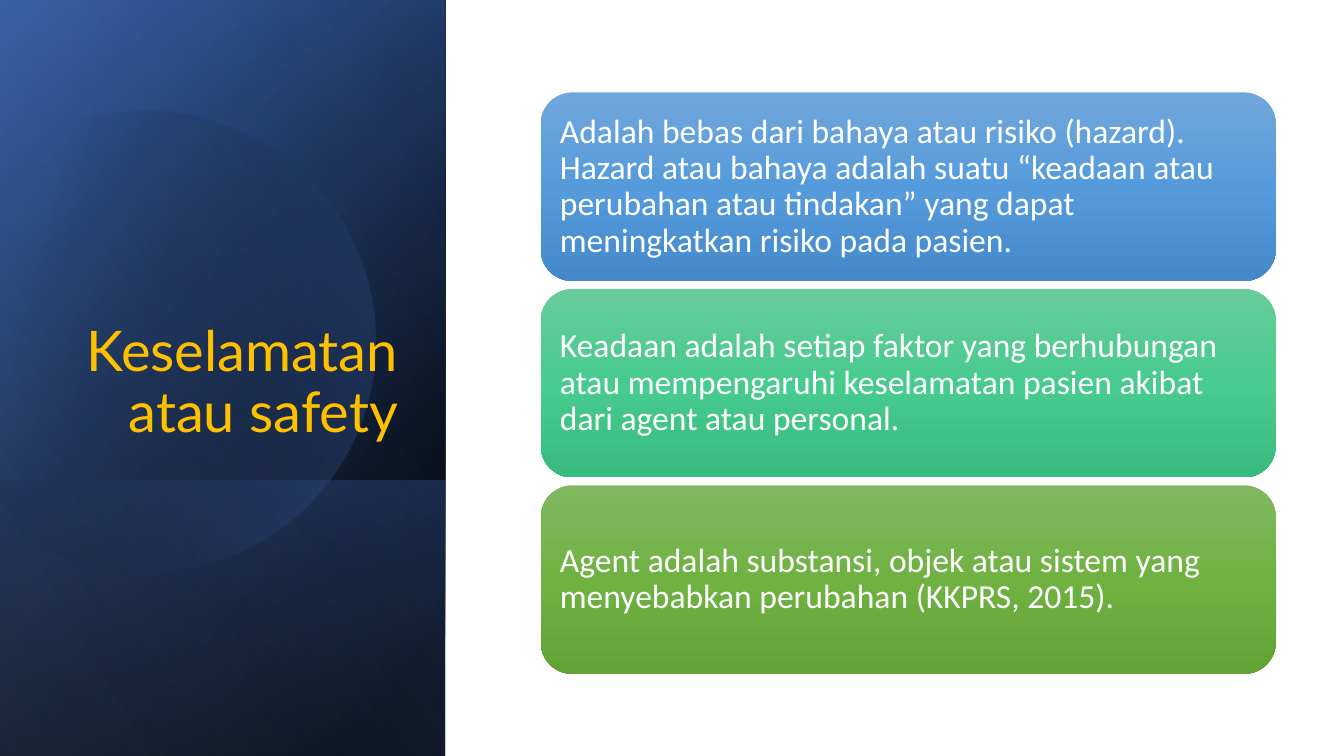
import math

from lxml import etree
from pptx import Presentation
from pptx.dml.color import RGBColor
from pptx.enum.shapes import MSO_SHAPE
from pptx.enum.text import MSO_ANCHOR, MSO_AUTO_SIZE, PP_ALIGN
from pptx.oxml.ns import qn
from pptx.util import Cm, Pt

RECT, ROUNDED = MSO_SHAPE.RECTANGLE, MSO_SHAPE.ROUNDED_RECTANGLE
LEFT, RIGHT = PP_ALIGN.LEFT, PP_ALIGN.RIGHT
MIDDLE, BOTTOM = MSO_ANCHOR.MIDDLE, MSO_ANCHOR.BOTTOM
NO_AUTOFIT = MSO_AUTO_SIZE.NONE

COLORS = {
    "black": "000000", "navy": "2F5597", "blue": "4472C4", "pale": "8FAADC",
    "gold": "FFC000", "white": "FFFFFF",
}
SLIDE_W, SLIDE_H = 33.87, 19.05
PANEL_W = 11.22
STRIP_H = 6.95
DISC_ANGLES = (-118, -90, 0, 90, 150)

# Colours from top to bottom, then the wording of each card
CARDS = [
    (("71A6DB", "559BDB", "448ACA"),
     "Adalah bebas dari bahaya atau risiko (hazard). Hazard atau bahaya adalah "
     "suatu “keadaan atau perubahan atau tindakan” yang dapat meningkatkan "
     "risiko pada pasien."),
    (("67CC9A", "47CB8E", "39BB7F"),
     "Keadaan adalah setiap faktor yang berhubungan atau mempengaruhi "
     "keselamatan pasien akibat dari agent atau personal."),
    (("81B861", "6FB242", "62A336"),
     "Agent adalah substansi, objek atau sistem yang menyebabkan perubahan "
     "(KKPRS, 2015)."),
]


def paint_gradient(shape, stops, angle):
    """Fill with (position %, hex, opacity %) stops, angle clockwise."""
    shape.shadow.inherit = False
    shape.line.fill.background()
    shape.fill.gradient()
    gradient = shape.element.spPr.find(qn("a:gradFill"))
    stop_list = gradient.find(qn("a:gsLst"))
    stop_list.clear()
    for position, color, opacity in stops:
        stop = etree.SubElement(stop_list, qn("a:gs"), pos=str(position * 1000))
        rgb = etree.SubElement(stop, qn("a:srgbClr"), val=color)
        if opacity < 100:
            etree.SubElement(rgb, qn("a:alpha"), val=str(opacity * 1000))
    gradient.find(qn("a:lin")).set("ang", str(round(angle * 60000)))


def write_text(shape, text, *, font, size, color, align, anchor, inset_x, inset_y):
    frame = shape.text_frame
    frame.word_wrap = True
    frame.auto_size = NO_AUTOFIT
    frame.vertical_anchor = anchor
    frame.margin_left = frame.margin_right = Cm(inset_x)
    frame.margin_top = frame.margin_bottom = Cm(inset_y)
    paragraph = frame.paragraphs[0]
    paragraph.alignment = align
    paragraph.line_spacing = 0.9
    run = paragraph.add_run()
    run.text = text
    run.font.name = font
    run.font.size = Pt(size)
    run.font.color.rgb = RGBColor.from_string(color)


def add_layer(slide, left, top, width, height, stops, angle):
    """Add a mirrored rectangle, turned a quarter, that covers the given box."""
    layer = slide.shapes.add_shape(
        RECT, Cm(left + (width - height) / 2), Cm(top + (height - width) / 2),
        Cm(height), Cm(width))
    layer.rotation = 90
    layer.element.spPr.xfrm.set("flipH", "1")
    paint_gradient(layer, stops, angle)


def add_disc(slide, center_x, center_y, radius):
    """Add the translucent disc, cut straight on its left side."""
    points = []
    for start, end in zip(DISC_ANGLES, DISC_ANGLES[1:]):
        a, b = math.radians(start), math.radians(end)
        pull = 4 / 3 * math.tan((b - a) / 4)
        for angle, tangent in ((a, 0), (a, pull), (b, -pull), (b, 0)):
            x = math.cos(angle) - tangent * math.sin(angle)
            y = math.sin(angle) + tangent * math.cos(angle)
            points.append((Cm(center_x + radius * x), Cm(center_y + radius * y)))
    # Each curve starts where the one before it ends
    outline = [point for i, point in enumerate(points) if i == 0 or i % 4]
    builder = slide.shapes.build_freeform(*outline[0])
    builder.add_line_segments(outline[1:], close=True)
    disc = builder.convert_to_shape()

    # Turn every three line points into one curve
    lines = list(disc.element.iter(qn("a:lnTo")))
    for first in range(0, len(lines), 3):
        curve = etree.Element(qn("a:cubicBezTo"))
        lines[first].addprevious(curve)
        for line in lines[first:first + 3]:
            curve.append(line[0])
            line.getparent().remove(line)
    disc.rotation = 343.9
    paint_gradient(disc, [(29, COLORS["black"], 0), (100, COLORS["blue"], 43)], 30)


def add_title_panel(slide, left, top, width, height):
    black, blue = COLORS["black"], COLORS["blue"]
    panel = (left, top, width, height)
    strip = (left, top + height - STRIP_H, width, STRIP_H)

    # Stacked gradients
    add_layer(slide, *panel, [(8, black, 100), (100, COLORS["navy"], 100)], 50)
    add_layer(slide, *panel, [(0, black, 0), (99, blue, 46)], 30)
    add_layer(slide, *strip, [(2, blue, 29), (100, black, 30)], 130)
    add_disc(slide, left + 3.64, top + 8.5, 5.81)
    add_layer(slide, *panel, [(0, black, 0), (99, COLORS["pale"], 11)], 120)

    # Title, brought in front of the panel
    title = slide.shapes.title
    title.left, title.top = Cm(left + 1.62), Cm(top + 4.68)
    title.width, title.height = Cm(8.66), Cm(6.65)
    write_text(title, "Keselamatan atau safety", font="Lato", size=40,
               color=COLORS["gold"], align=RIGHT, anchor=BOTTOM,
               inset_x=0.25, inset_y=0.13)
    slide.shapes.element.append(title.element)


def add_cards(slide, left, top, width, height, gap=0.2):
    card_h = (height - gap * (len(CARDS) - 1)) / len(CARDS)
    for index, (shades, definition) in enumerate(CARDS):
        card = slide.shapes.add_shape(
            ROUNDED, Cm(left), Cm(top + index * (card_h + gap)),
            Cm(width), Cm(card_h))
        stops = [(position, shade, 100)
                 for position, shade in zip((0, 50, 100), shades)]
        paint_gradient(card, stops, 90)
        # The rounded shape already insets its text by about 0.23 cm
        write_text(card, definition, font="Calibri", size=24,
                   color=COLORS["white"], align=LEFT, anchor=MIDDLE,
                   inset_x=0.25, inset_y=0.25)


def main():
    deck = Presentation()
    deck.slide_width, deck.slide_height = Cm(SLIDE_W), Cm(SLIDE_H)
    slide = deck.slides.add_slide(deck.slide_layouts[5])
    add_title_panel(slide, 0, 0, PANEL_W, SLIDE_H)
    add_cards(slide, 13.63, 2.33, 18.52, 14.65)
    deck.save("out.pptx")


if __name__ == "__main__":
    main()
